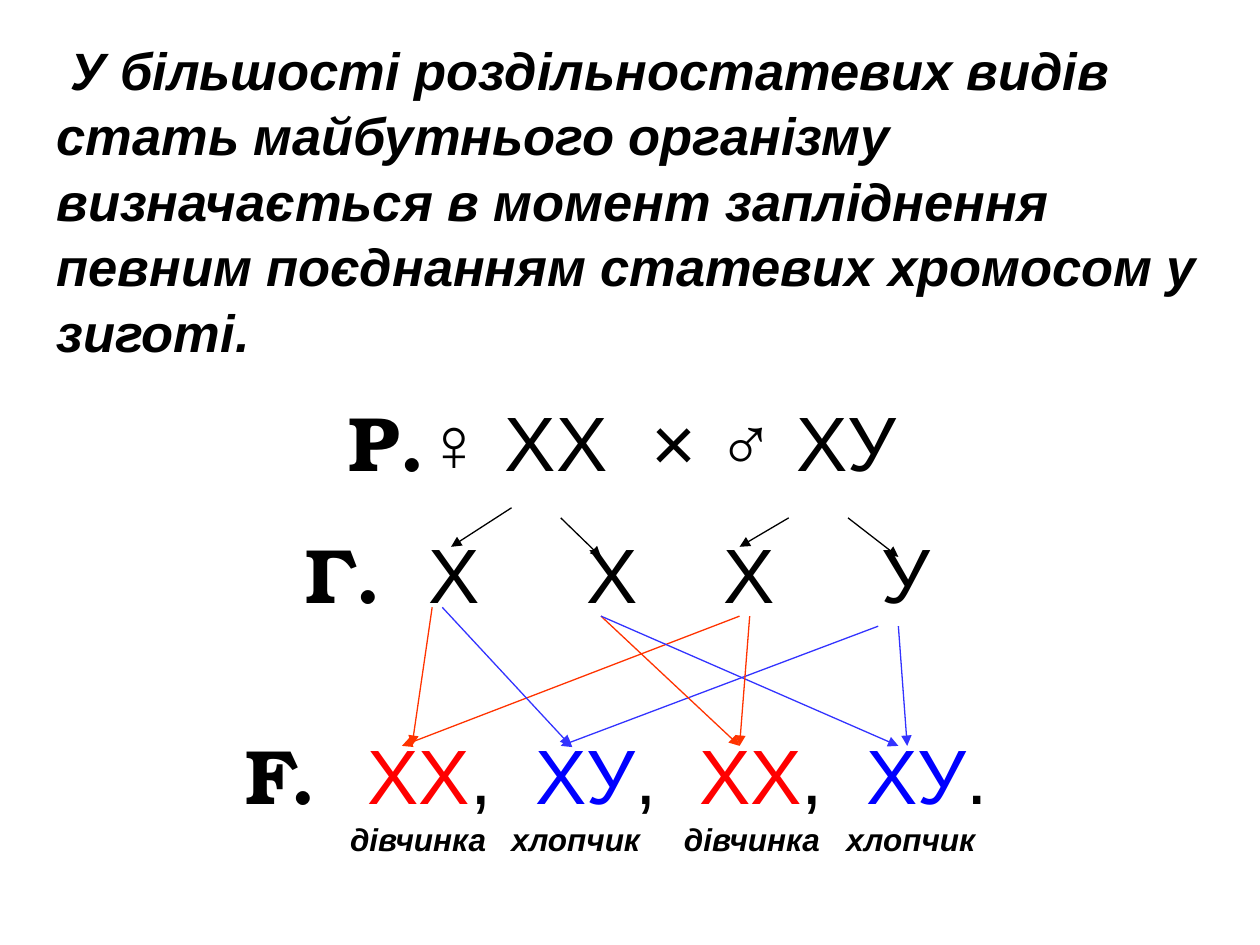
from lxml import etree
from pptx import Presentation
from pptx.dml.color import RGBColor
from pptx.enum.shapes import MSO_CONNECTOR
from pptx.enum.text import MSO_ANCHOR
from pptx.oxml.ns import qn
from pptx.util import Inches, Pt

BLACK = RGBColor(0x00, 0x00, 0x00)
RED = RGBColor(0xFF, 0x00, 0x00)
BLUE = RGBColor(0x00, 0x00, 0xFF)
ARROW_RED = RGBColor(0xFF, 0x33, 0x00)
ARROW_BLUE = RGBColor(0x33, 0x33, 0xFF)
STRAIGHT = MSO_CONNECTOR.STRAIGHT
MIDDLE, TOP = MSO_ANCHOR.MIDDLE, MSO_ANCHOR.TOP
SANS, SERIF = "Arial", "TeX Gyre Bonum"
CELL = 0.1

TITLE = ("У більшості роздільностатевих видів стать майбутнього організму визначається "
         "в момент запліднення певним поєднанням статевих хромосом у зиготі.")

PARENT_ROW, GAMETE_ROW, OFFSPRING_ROW = 40.3, 43.4, 59.2
FEMALE_X, MALE_X, MALE_Y = (47.7, 48.9), (58.7, 48.9), (71.3, 49.7)
ARROWS = [
    (BLACK, (40.6, PARENT_ROW), (35.8, GAMETE_ROW)),
    (BLACK, (44.5, 41.1), (47.7, 44.2)),
    (BLACK, (62.6, 41.1), (58.7, GAMETE_ROW)),
    (BLACK, (67.3, 41.1), (71.3, 44.2)),
    (ARROW_RED, (34.3, 48.2), (32.7, OFFSPRING_ROW)),
    (ARROW_RED, MALE_X, (31.9, OFFSPRING_ROW)),
    (ARROW_BLUE, (35.1, 48.2), (45.3, OFFSPRING_ROW)),
    (ARROW_BLUE, (69.7, 49.7), (44.5, OFFSPRING_ROW)),
    (ARROW_RED, FEMALE_X, (58.7, OFFSPRING_ROW)),
    (ARROW_BLUE, FEMALE_X, (71.3, OFFSPRING_ROW)),
    (ARROW_BLUE, MALE_Y, (72, OFFSPRING_ROW)),
    (ARROW_RED, (59.5, 48.9), (58.7, OFFSPRING_ROW)),
]


def cells(count):
    """Convert grid cells to a length."""
    return Inches(count * CELL)


class SlideBuilder:
    """Holds the style and the current slide."""

    def __init__(self, presentation):
        self.slide = presentation.slides.add_slide(presentation.slide_layouts[6])

    def text_box(self, left, top, width, height, anchor=TOP):
        """Add a wrapping text box and return its text frame."""
        shape = self.slide.shapes.add_textbox(*map(cells, (left, top, width, height)))
        frame = shape.text_frame
        frame.word_wrap = True
        frame.vertical_anchor = anchor
        return frame

    def title(self, text):
        """Add the bold italic statement."""
        paragraph = self.text_box(3.5, 3.6, 93.7, 24.4, MIDDLE).paragraphs[0]
        paragraph._p.get_or_add_pPr().set("indent", str(cells(1.08)))
        paragraph.text = text
        paragraph.line_spacing = 1.04
        font = paragraph.font
        font.name, font.size, font.bold, font.italic = SANS, Pt(30), True, True
        font.color.rgb = BLACK

    def tabs(self, paragraph, stops):
        """Give a paragraph left tab stops."""
        tab_list = etree.SubElement(paragraph._p.get_or_add_pPr(), qn("a:tabLst"))
        for stop in stops:
            etree.SubElement(tab_list, qn("a:tab"), pos=str(cells(stop)), algn="l")

    def cross_row(self, paragraph, stops, runs, space=0):
        """Write one row of the cross from (text, face, colour) runs."""
        paragraph.space_before = Pt(space)
        self.tabs(paragraph, stops)
        paragraph.font.size = Pt(44)
        for text, face, color in runs:
            run = paragraph.add_run()
            run.text = text
            run.font.name, run.font.size = face, Pt(44)
            run.font.bold = face == SERIF
            run.font.color.rgb = color

    def label_row(self, paragraph, stops, labels):
        """Write the small labels under the offspring."""
        self.tabs(paragraph, stops)
        paragraph.text = "".join("\t" + label for label in labels)
        font = paragraph.font
        font.name, font.size, font.bold, font.italic = SANS, Pt(18), True, True
        font.color.rgb = BLACK

    def arrow(self, color, start, end):
        """Draw a thin arrow between two grid points."""
        connector = self.slide.shapes.add_connector(STRAIGHT, *map(cells, start + end))
        connector.line.color.rgb = color
        connector.line.width = Pt(0.75)
        etree.SubElement(connector.line._get_or_add_ln(), qn("a:tailEnd"), type="triangle")
        etree.SubElement(connector._element.spPr, qn("a:effectLst"))


def main():
    """Build the slide."""
    presentation = Presentation()
    presentation.slide_width, presentation.slide_height = cells(100), cells(75)
    builder = SlideBuilder(presentation)
    builder.title(TITLE)

    frame = builder.text_box(18.5, 30.8, 63, 41.3)
    parents = frame.paragraphs[0]
    gametes, offspring, labels = (frame.add_paragraph() for _ in range(3))
    builder.cross_row(parents, (8.2, 32.2),
                      [("\tР.", SERIF, BLACK), ("♀ ХХ\t× ♂ ХУ", SANS, BLACK)])
    builder.cross_row(gametes, (4.8, 14.5, 27.1, 37.9, 50.5),
                      [("\tГ.", SERIF, BLACK), ("\tХ\tХ\tХ\tУ", SANS, BLACK)], 23)
    children = [("F.", SERIF, BLACK)]
    for genotype, color, mark in (("ХХ", RED, ","), ("ХУ", BLUE, ","),
                                  ("ХХ", RED, ","), ("ХУ", BLUE, ".")):
        children += [("\t" + genotype, SANS, color), (mark, SANS, BLACK)]
    builder.cross_row(offspring, (9.7, 23, 36, 49.3), children, 62)
    builder.label_row(labels, (8.3, 21.1, 34.8, 47.7), ("дівчинка", "хлопчик") * 2)

    for color, start, end in ARROWS:
        builder.arrow(color, start, end)
    presentation.save("out.pptx")


if __name__ == "__main__":
    main()
